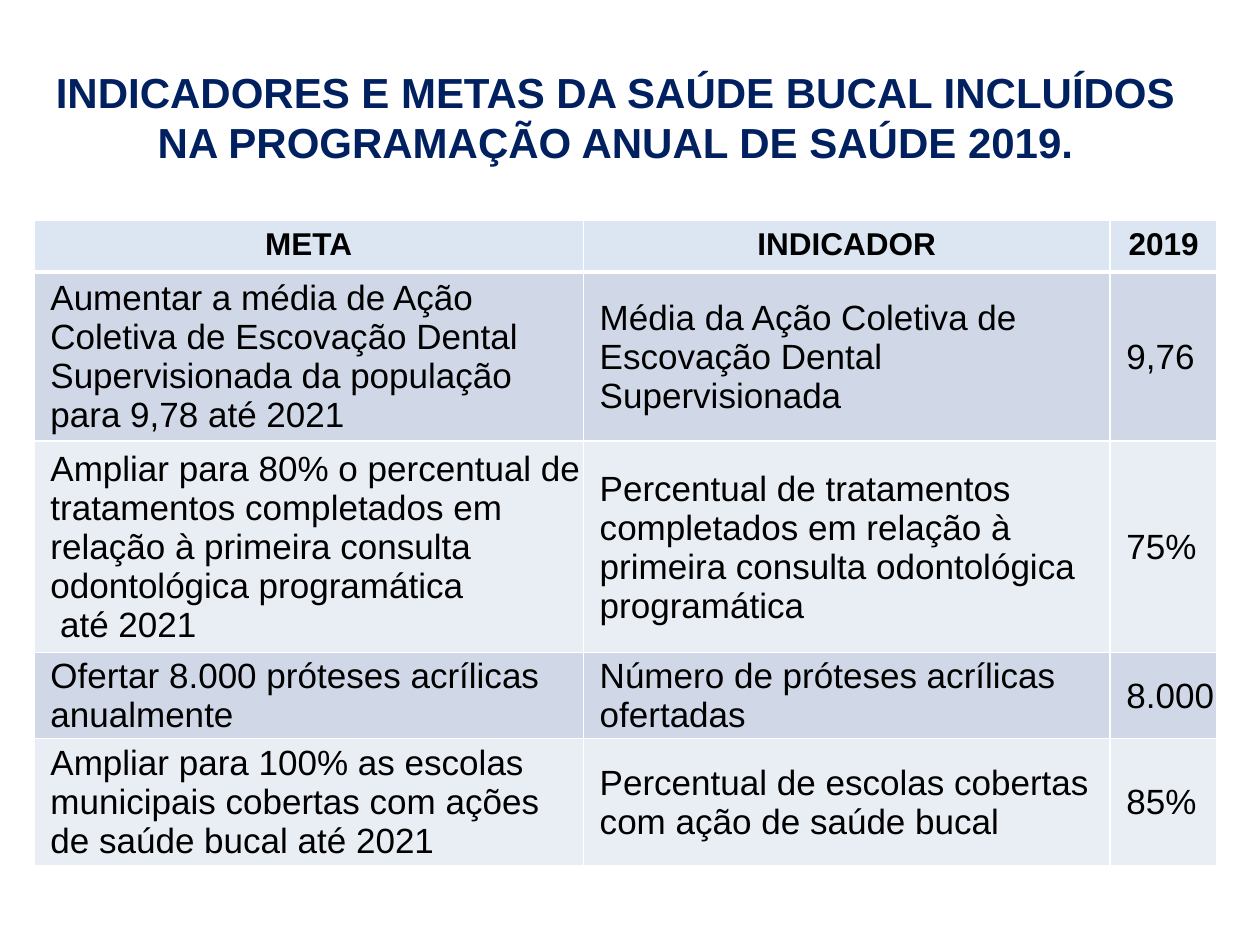
from lxml import etree
from pptx import Presentation
from pptx.dml.color import RGBColor
from pptx.enum.text import MSO_ANCHOR as Anchor, PP_ALIGN as Align
from pptx.oxml.ns import qn
from pptx.util import Inches, Pt

NAVY = RGBColor(0x00, 0x20, 0x60)
BLACK = RGBColor(0x00, 0x00, 0x00)
WHITE = RGBColor(0xFF, 0xFF, 0xFF)
HEADER_BLUE = RGBColor(0xDC, 0xE6, 0xF2)
BAND_DARK = RGBColor(0xD0, 0xD8, 0xE8)
BAND_LIGHT = RGBColor(0xE9, 0xED, 0xF4)

TITLE = ("INDICADORES E METAS DA SAÚDE BUCAL INCLUÍDOS "
         "NA PROGRAMAÇÃO ANUAL DE SAÚDE 2019.")
COLUMN_WIDTHS = [4.36, 4.18, 0.85]
ROW_HEIGHTS = [0.41, 1.34, 1.68, 0.68, 1.01]
# A vertical tab is a line break inside the paragraph
ROWS = [
    ("META", "INDICADOR", "2019"),
    ("Aumentar a média de Ação Coletiva de Escovação Dental "
     "Supervisionada da população para 9,78 até 2021",
     "Média da Ação Coletiva de Escovação Dental Supervisionada",
     "9,76"),
    ("Ampliar para 80% o percentual de tratamentos completados em relação "
     "à primeira consulta odontológica programática\v até 2021",
     "Percentual de tratamentos completados em relação à primeira consulta "
     "odontológica programática",
     "75%"),
    ("Ofertar 8.000 próteses acrílicas anualmente",
     "Número de próteses acrílicas ofertadas",
     "8.000"),
    ("Ampliar para 100% as escolas municipais cobertas com ações de saúde "
     "bucal até 2021",
     "Percentual de escolas cobertas com ação de saúde bucal",
     "85%"),
]


class SlideBuilder:
    font_name = "Arial"

    def __init__(self, slide):
        self.slide = slide

    def format_text(self, text_frame, size, color, bold, align):
        for paragraph in text_frame.paragraphs:
            paragraph.alignment = align
            for run in paragraph.runs:
                run.font.name = self.font_name
                run.font.size = Pt(size)
                run.font.bold = bold
                run.font.color.rgb = color

    def add_title(self, text, left, top, width, height):
        title = self.slide.shapes.title
        title.left, title.top = Inches(left), Inches(top)
        title.width, title.height = Inches(width), Inches(height)
        title.text_frame.text = text
        title.text_frame.word_wrap = True
        title.text_frame.vertical_anchor = Anchor.MIDDLE
        self.format_text(title.text_frame, 24, NAVY, True, Align.CENTER)

    def add_table(self, rows, left, top, widths, heights):
        frame = self.slide.shapes.add_table(
            len(rows), len(widths), Inches(left), Inches(top),
            Inches(sum(widths)), Inches(sum(heights)))
        table = frame.table
        for column, width in zip(table.columns, widths):
            column.width = Inches(width)
        for row, height in zip(table.rows, heights):
            row.height = Inches(height)
        for row_index, texts in enumerate(rows):
            for column_index, text in enumerate(texts):
                self.fill_cell(table.cell(row_index, column_index), text, row_index)

    def fill_cell(self, cell, text, row_index):
        cell.text_frame.text = text
        # The header's thick rule is shared with the row below it
        self.add_borders(cell, top=3 if row_index == 1 else 1,
                         bottom=3 if row_index == 0 else 1)
        cell.fill.solid()
        if row_index == 0:
            cell.fill.fore_color.rgb = HEADER_BLUE
            self.format_text(cell.text_frame, 18, BLACK, True, Align.CENTER)
            return
        cell.fill.fore_color.rgb = BAND_DARK if row_index % 2 else BAND_LIGHT
        cell.vertical_anchor = Anchor.MIDDLE
        cell.margin_left, cell.margin_right = Inches(0.13), Inches(0.01)
        cell.margin_top, cell.margin_bottom = Inches(0.01), Inches(0)
        self.format_text(cell.text_frame, 20, BLACK, False, Align.LEFT)

    def add_borders(self, cell, top, bottom):
        properties = cell._tc.get_or_add_tcPr()
        for tag, width in (("lnL", 1), ("lnR", 1), ("lnT", top), ("lnB", bottom)):
            line = etree.SubElement(properties, qn(f"a:{tag}"), w=str(Pt(width)))
            fill = etree.SubElement(line, qn("a:solidFill"))
            etree.SubElement(fill, qn("a:srgbClr"), val=str(WHITE))


def main():
    presentation = Presentation()
    presentation.slide_width = Inches(10)
    presentation.slide_height = Inches(7.5)
    title_only = presentation.slide_layouts[5]
    builder = SlideBuilder(presentation.slides.add_slide(title_only))

    # Title
    builder.add_title(TITLE, 0.27, 0.3, 9.23, 1.25)

    # Goals and indicators
    builder.add_table(ROWS, 0.27, 1.75, COLUMN_WIDTHS, ROW_HEIGHTS)

    presentation.save("out.pptx")


if __name__ == "__main__":
    main()
